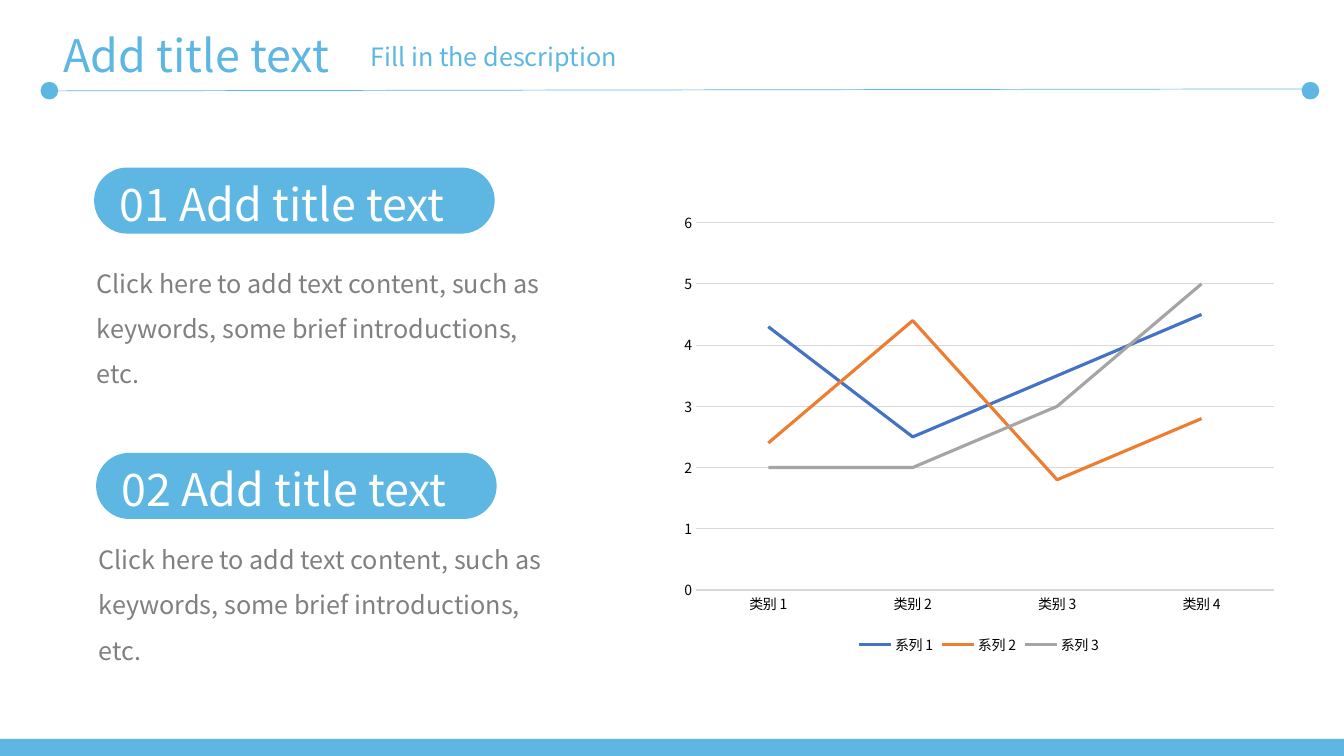
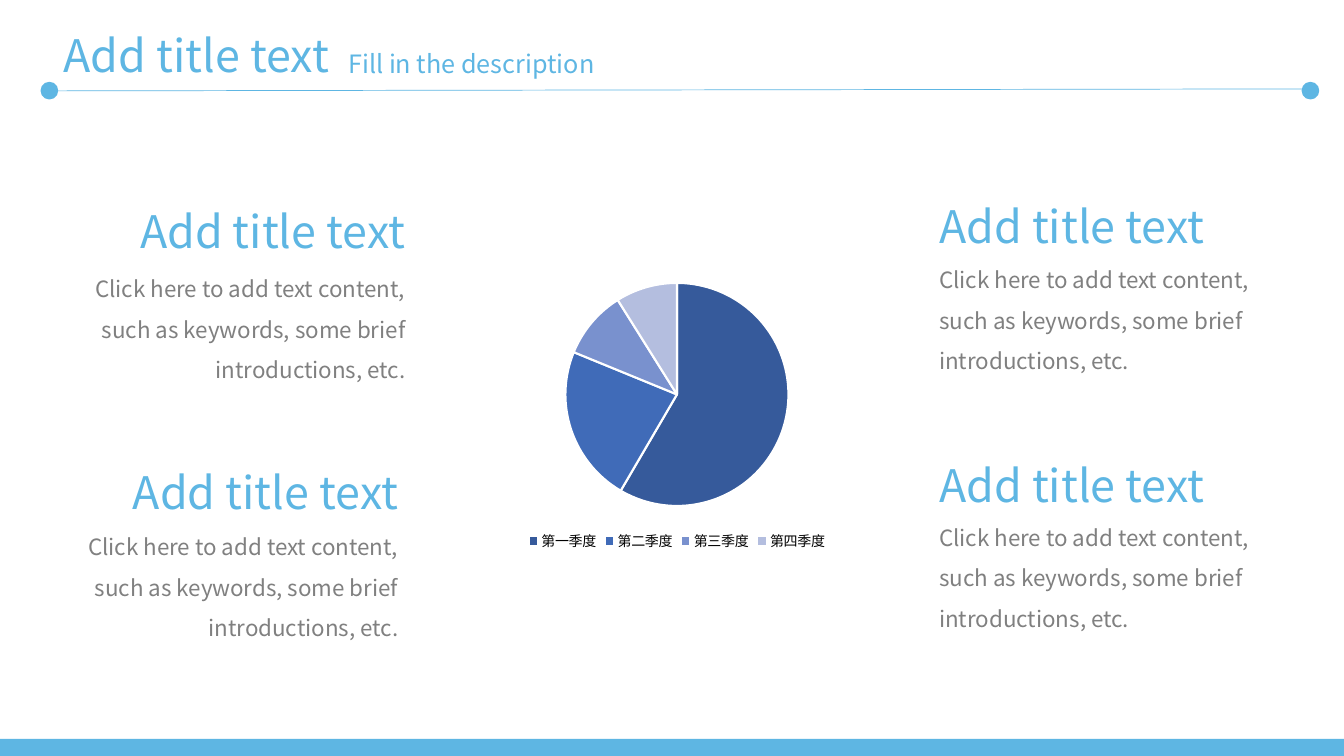
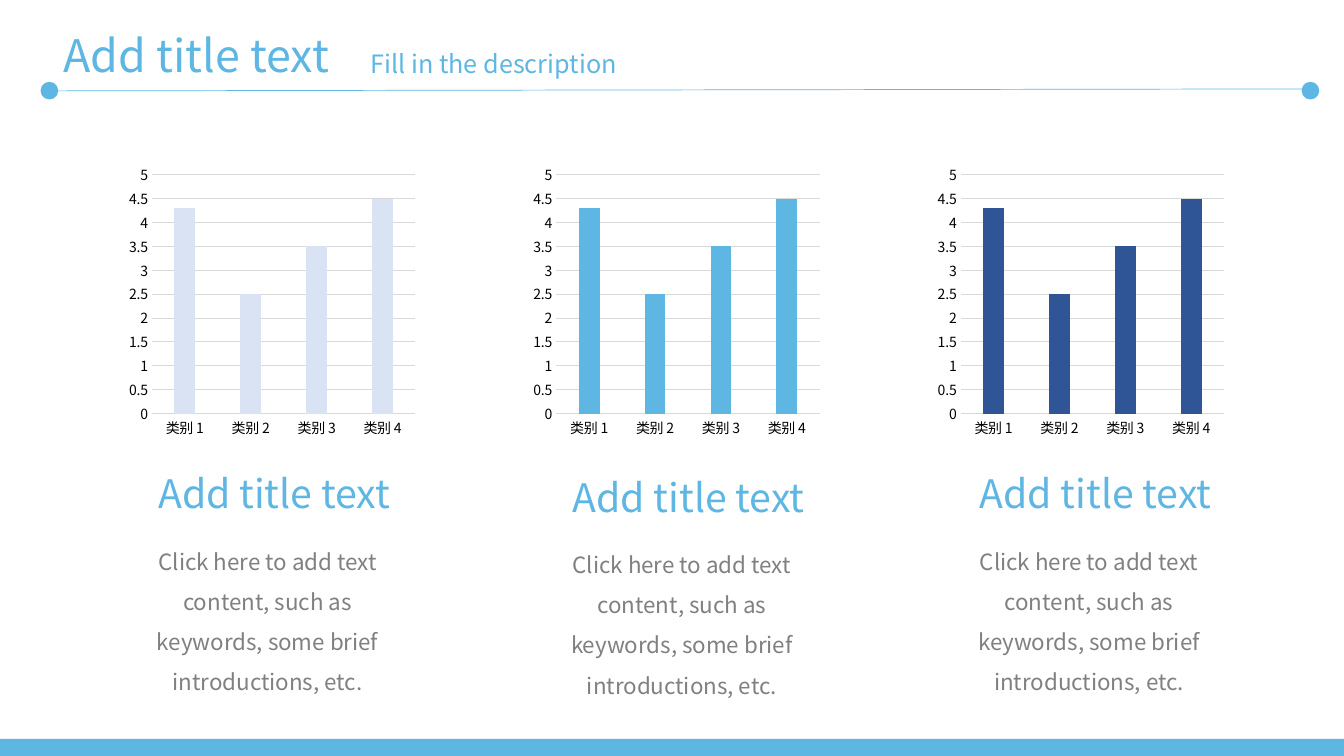
from lxml.etree import SubElement
from pptx import Presentation
from pptx.chart.data import CategoryChartData
from pptx.dml.color import RGBColor
from pptx.enum.chart import XL_CHART_TYPE, XL_LEGEND_POSITION, XL_TICK_MARK
from pptx.enum.shapes import MSO_CONNECTOR, MSO_SHAPE
from pptx.enum.text import MSO_ANCHOR, MSO_AUTO_SIZE, PP_ALIGN
from pptx.oxml.ns import qn
from pptx.util import Cm, Pt

FONT = "Noto Sans CJK SC"
SKY = RGBColor(0x5E, 0xB6, 0xE3)
GRAY = RGBColor(0x80, 0x80, 0x80)
WHITE = RGBColor(0xFF, 0xFF, 0xFF)
BLACK = RGBColor(0x00, 0x00, 0x00)
GRID = RGBColor(0xD9, 0xD9, 0xD9)
BLUE = RGBColor(0x44, 0x72, 0xC4)
ORANGE = RGBColor(0xED, 0x7D, 0x31)
SILVER = RGBColor(0xA5, 0xA5, 0xA5)
PALE = RGBColor(0xDA, 0xE3, 0xF3)
NAVY = RGBColor(0x2F, 0x55, 0x97)
PIE_COLORS = (
    RGBColor(0x36, 0x5A, 0x9B),
    RGBColor(0x40, 0x6B, 0xB8),
    RGBColor(0x79, 0x91, 0xCE),
    RGBColor(0xB4, 0xBE, 0xDF),
)

TITLE = "Add title text"
DESCRIPTION = "Fill in the description"
BODY = "Click here to add text content, such as keywords, some brief introductions, etc."
CATEGORIES = ["类别 1", "类别 2", "类别 3", "类别 4"]
QUARTERS = ["第一季度", "第二季度", "第三季度", "第四季度"]


class Deck:
    """Hold the shared style and the current slide, and add elements to it."""

    def __init__(self):
        self.presentation = Presentation()
        self.presentation.slide_width = Cm(33.87)
        self.presentation.slide_height = Cm(19.05)
        self.slide = None

    def start_slide(self, description_left, description_top):
        layout = self.presentation.slide_layouts.get_by_name("Title Only")
        self.slide = self.presentation.slides.add_slide(layout)
        self.shape(MSO_SHAPE.RECTANGLE, 0, 18.62, 33.87, 0.43, outlined=False)
        self.rule(33.22, 2.24, 1.35, 2.29)
        for dot_left in (1.04, 32.82):
            self.shape(MSO_SHAPE.OVAL, dot_left, 2.08, 0.41, 0.41)
        title = self.slide.shapes.title
        title.left, title.top, title.width, title.height = Cm(1.35), Cm(0.58), Cm(7.75), Cm(1.63)
        self.fill_text(title, TITLE, 32, SKY)
        self.text(DESCRIPTION, description_left, description_top, 7.75, 1.02, 18)

    def fill_text(self, shape, text, size, color, align=PP_ALIGN.LEFT, spacing=1.0):
        frame = shape.text_frame
        frame.text = text
        frame.word_wrap = True
        frame.auto_size = MSO_AUTO_SIZE.SHAPE_TO_FIT_TEXT
        frame.vertical_anchor = MSO_ANCHOR.TOP
        paragraph = frame.paragraphs[0]
        paragraph.alignment = align
        paragraph.line_spacing = spacing
        paragraph.font.name = FONT
        paragraph.font.size = Pt(size)
        paragraph.font.color.rgb = color

    def text(self, text, left, top, width, height, size, color=SKY, align=PP_ALIGN.LEFT, spacing=1.0):
        box = self.slide.shapes.add_textbox(Cm(left), Cm(top), Cm(width), Cm(height))
        self.fill_text(box, text, size, color, align, spacing)

    def body(self, left, top, width, height, size=16, align=PP_ALIGN.LEFT):
        self.text(BODY, left, top, width, height, size, GRAY, align, 1.5)

    def shape(self, kind, left, top, width, height, outlined=True):
        shape = self.slide.shapes.add_shape(kind, Cm(left), Cm(top), Cm(width), Cm(height))
        shape.shadow.inherit = False
        shape.fill.solid()
        shape.fill.fore_color.rgb = SKY
        if outlined:
            shape.line.color.rgb = SKY
            shape.line.width = Pt(1)
        else:
            shape.line.fill.background()
        return shape

    def rule(self, start_x, start_y, end_x, end_y):
        connector = self.slide.shapes.add_connector(
            MSO_CONNECTOR.STRAIGHT, Cm(start_x), Cm(start_y), Cm(end_x), Cm(end_y)
        )
        connector.line.color.rgb = SKY
        connector.line.width = Pt(0.5)
        SubElement(connector.element.spPr, qn("a:effectLst"))

    def pill(self, text, left, top):
        pill = self.shape(MSO_SHAPE.ROUNDED_RECTANGLE, left, top, 10.06, 1.63)
        pill.adjustments[0] = 0.5
        self.text(text, left + 0.38, top + 0.09, 9.58, 1.63, 32, WHITE)

    def chart(self, kind, left, top, width, height, categories, series, legend=True):
        data = CategoryChartData()
        data.categories = categories
        for name, values in series:
            data.add_series(name, values)
        frame = self.slide.shapes.add_chart(kind, Cm(left), Cm(top), Cm(width), Cm(height), data)
        chart = frame.chart
        chart.has_title = False
        chart.has_legend = legend
        if legend:
            chart.legend.position = XL_LEGEND_POSITION.BOTTOM
            chart.legend.include_in_layout = False
        chart.font.name = FONT
        chart.font.size = Pt(10)
        chart.font.color.rgb = BLACK
        for properties in chart.element.iter(qn("a:defRPr")):
            SubElement(properties, qn("a:ea"), typeface=FONT)
        return chart

    def style_axes(self, chart, maximum, step):
        chart.plots[0].vary_by_categories = False
        for axis in (chart.category_axis, chart.value_axis):
            axis.major_tick_mark = axis.minor_tick_mark = XL_TICK_MARK.NONE
        values = chart.value_axis
        values.minimum_scale, values.maximum_scale, values.major_unit = 0, maximum, step
        values.format.line.fill.background()
        for line in (chart.category_axis.format.line, values.major_gridlines.format.line):
            line.color.rgb = GRID
            line.width = Pt(0.75)

    def line_chart(self, left, top, width, height, series, colors):
        chart = self.chart(XL_CHART_TYPE.LINE, left, top, width, height, CATEGORIES, series)
        self.style_axes(chart, 6, 1)
        for plotted, color in zip(chart.plots[0].series, colors):
            plotted.smooth = False
            plotted.format.line.color.rgb = color
            plotted.format.line.width = Pt(2.25)

    def pie_chart(self, left, top, width, height, values):
        series = [("Series 1", values)]
        chart = self.chart(XL_CHART_TYPE.PIE, left, top, width, height, QUARTERS, series)
        for index, color in enumerate(PIE_COLORS):
            point = chart.plots[0].series[0].points[index]
            point.format.fill.solid()
            point.format.fill.fore_color.rgb = color
            point.format.line.color.rgb = WHITE
            point.format.line.width = Pt(1.5)

    def column_chart(self, left, top, width, height, values, color):
        series = [("Series 1", values)]
        kind = XL_CHART_TYPE.COLUMN_CLUSTERED
        chart = self.chart(kind, left, top, width, height, CATEGORIES, series, legend=False)
        self.style_axes(chart, 5, 0.5)
        plot = chart.plots[0]
        plot.gap_width = 219
        plot.overlap = -27
        fill = plot.series[0].format.fill
        fill.solid()
        fill.fore_color.rgb = color


def add_line_slide(deck):
    deck.start_slide(9.09, 0.91)
    for number, left, top, body_top in (("01", 2.39, 4.24, 6.25), ("02", 2.44, 11.43, 13.21)):
        deck.pill(f"{number} {TITLE}", left, top)
        deck.body(left - 0.2, body_top, 12.09, 3.71, size=18)
    series = (
        ("系列 1", (4.3, 2.5, 3.5, 4.5)),
        ("系列 2", (2.4, 4.4, 1.8, 2.8)),
        ("系列 3", (2, 2, 3, 5)),
    )
    deck.line_chart(16.94, 5.13, 15.47, 11.46, series, (BLUE, ORANGE, SILVER))


def add_pie_slide(deck):
    deck.start_slide(8.53, 1.09)
    deck.pie_chart(11.13, 6.78, 11.86, 7.21, (59, 23, 10, 9))
    for right, heading_top, body_top, width in ((10.47, 5, 6.48, 9.02), (10.29, 11.58, 12.98, 9.25)):
        deck.text(TITLE, right - 7.8, heading_top, 7.8, 1.63, 32, align=PP_ALIGN.RIGHT)
        deck.body(right - width, body_top, width, 3.23, align=PP_ALIGN.RIGHT)
    for heading_top, body_top, width in ((4.88, 6.25, 9.02), (11.4, 12.75, 9.25)):
        deck.text(TITLE, 23.42, heading_top, 7.8, 1.63, 32)
        deck.body(23.42, body_top, width, 3.23)


def add_column_slide(deck):
    deck.start_slide(9.09, 1.09)
    columns = ((PALE, 3.1, 11.71), (SKY, 13.54, 11.79), (NAVY, 23.8, 11.71))
    for index, (color, left, top) in enumerate(columns):
        deck.column_chart(3.1 + 10.19 * index, 4.01, 7.52, 7.16, (4.3, 2.5, 3.5, 4.5), color)
        deck.text(TITLE, left + 0.05, top, 7.52, 1.45, 28, align=PP_ALIGN.CENTER)
        deck.body(left, top + 1.63, 7.29, 4.24, align=PP_ALIGN.CENTER)


def main():
    deck = Deck()
    add_line_slide(deck)
    add_pie_slide(deck)
    add_column_slide(deck)
    deck.presentation.save("out.pptx")


if __name__ == "__main__":
    main()
